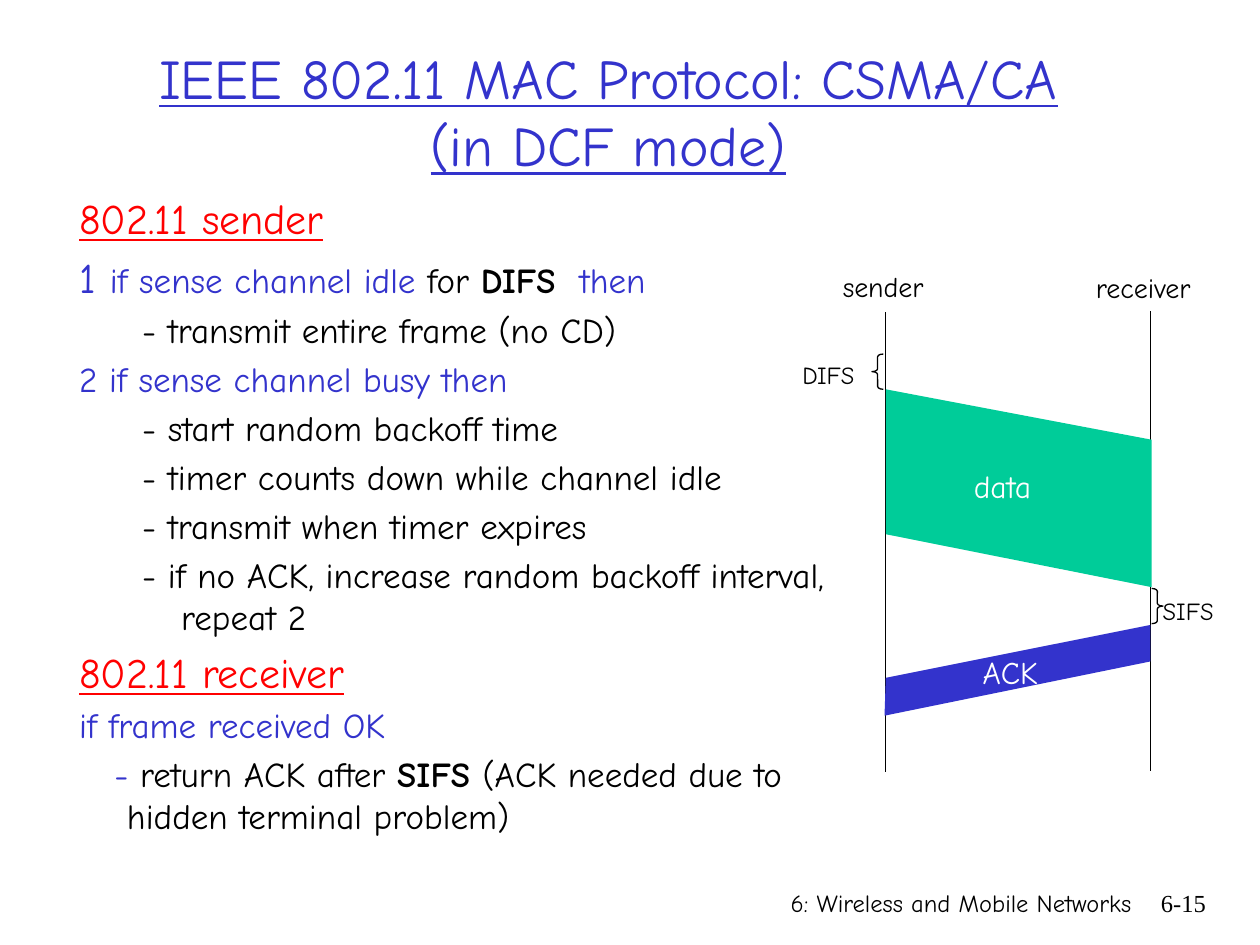
from dataclasses import dataclass

from lxml import etree
from pptx import Presentation
from pptx.dml.color import RGBColor
from pptx.enum.shapes import MSO_CONNECTOR, MSO_SHAPE
from pptx.enum.text import MSO_ANCHOR, PP_ALIGN
from pptx.oxml.ns import qn
from pptx.util import Inches, Pt

LEFT, CENTER, RIGHT = PP_ALIGN.LEFT, PP_ALIGN.CENTER, PP_ALIGN.RIGHT
TOP, MIDDLE = MSO_ANCHOR.TOP, MSO_ANCHOR.MIDDLE
LEFT_BRACE, RIGHT_BRACE = MSO_SHAPE.LEFT_BRACE, MSO_SHAPE.RIGHT_BRACE
STRAIGHT = MSO_CONNECTOR.STRAIGHT


@dataclass(frozen=True)
class Theme:
    font: str = "Comic Neue"
    number_font: str = "Times New Roman"
    black: str = "000000"
    white: str = "FFFFFF"
    blue: str = "3333CC"
    red: str = "FF0000"
    green: str = "00CC99"
    title: int = 32
    heading: int = 24
    body: int = 20
    band: int = 18
    label: int = 16
    small: int = 14
    line: float = 0.75


T = Theme()


def add_text(p, text, size=T.body, color=T.black, font=T.font, bold=False, underline=False):
    for i, line in enumerate(text.split("\n")):
        if i:
            p.add_line_break()
        r = p.add_run()
        r.text = line
        r.font.name, r.font.size = font, Pt(size)
        r.font.bold, r.font.underline = bold, underline
        r.font.color.rgb = RGBColor.from_string(color)


class SlideBuilder:
    def __init__(self, slide, theme):
        self.s = slide
        self.t = theme

    def box(self, x, y, w, h, anchor=TOP, wrap=True):
        sp = self.s.shapes.add_textbox(Inches(x), Inches(y), Inches(w), Inches(h))
        tf = sp.text_frame
        tf.word_wrap, tf.vertical_anchor = wrap, anchor
        return tf

    def text(self, x, y, w, h, text, align=LEFT, anchor=TOP, wrap=True, **fmt):
        p = self.box(x, y, w, h, anchor, wrap).paragraphs[0]
        p.alignment = align
        add_text(p, text, **fmt)

    def label(self, x, y, w, h, text, **fmt):
        self.text(x, y, w, h, text, wrap=False, **fmt)

    def outline(self, x, y, w, h, paragraphs):
        tf = self.box(x, y, w, h)
        for i, (margin, indent, runs) in enumerate(paragraphs):
            p = tf.paragraphs[0] if i == 0 else tf.add_paragraph()
            size = runs[0][1].get("size", self.t.body)
            p.space_before = Pt(size * 0.2)
            pPr = p._p.get_or_add_pPr()
            pPr.set("marL", str(Inches(margin)))
            pPr.set("indent", str(Inches(indent)))
            for text, fmt in runs:
                add_text(p, text, **fmt)

    def line(self, x1, y1, x2, y2):
        sp = self.s.shapes.add_connector(STRAIGHT, Inches(x1), Inches(y1), Inches(x2), Inches(y2))
        sp.line.color.rgb = RGBColor.from_string(self.t.black)
        sp.line.width = Pt(self.t.line)
        etree.SubElement(sp._element.spPr, qn("a:effectLst"))

    def brace(self, kind, x, y, w, h):
        sp = self.s.shapes.add_shape(kind, Inches(x), Inches(y), Inches(w), Inches(h))
        sp.adjustments[0] = 0.25
        sp.shadow.inherit = False
        sp.fill.background()
        sp.line.color.rgb = RGBColor.from_string(self.t.black)
        sp.line.width = Pt(self.t.line)

    def band(self, points, color):
        pts = [(Inches(x), Inches(y)) for x, y in points]
        fb = self.s.shapes.build_freeform(*pts[0])
        fb.add_line_segments(pts[1:], close=True)
        sp = fb.convert_to_shape()
        sp.shadow.inherit = False
        sp.fill.solid()
        sp.fill.fore_color.rgb = RGBColor.from_string(color)
        sp.line.fill.background()


def heading(text):
    return 0.38, -0.38, [(text, dict(size=T.heading, color=T.red, underline=True))]


def step(*runs):
    return 0.38, -0.38, list(runs)


def action(text):
    return 0.81, -0.31, [("- " + text, {})]


def main():
    prs = Presentation()
    prs.slide_width, prs.slide_height = Inches(10), Inches(7.5)
    b = SlideBuilder(prs.slides.add_slide(prs.slide_layouts[6]), T)
    blue, bold = dict(color=T.blue), dict(bold=True)

    b.text(4.86, 7, 4.22, 0.5, "6: Wireless and Mobile Networks", align=RIGHT, size=T.small)
    b.text(8.93, 7, 0.74, 0.5, "6-15", align=RIGHT, size=T.small, font=T.number_font)
    b.text(0.58, 0.25, 8.5, 1.25, "IEEE 802.11 MAC Protocol: CSMA/CA\n(in DCF mode)",
           align=CENTER, anchor=MIDDLE, size=T.title, color=T.blue, underline=True)

    b.outline(0.53, 1.48, 6.16, 5.42, [
        heading("802.11 sender"),
        step(("1 ", dict(size=T.heading, color=T.blue)), ("if sense channel idle", blue),
             (" for ", {}), ("DIFS ", bold), (" then", blue)),
        action("transmit entire frame (no CD)"),
        step(("2 if sense channel busy then", blue)),
        action("start random backoff time"),
        action("timer counts down while channel idle"),
        action("transmit when timer expires"),
        action("if no ACK, increase random backoff interval, repeat 2"),
        heading("802.11 receiver"),
        step(("if frame received OK", blue)),
        (0.38, -0.1, [("- ", blue), ("return ACK after ", {}), ("SIFS ", bold),
                      ("(ACK needed due to hidden terminal problem)", {})]),
    ])

    sender, receiver = 7.03, 9.13
    b.line(sender, 2.48, sender, 6.13)
    b.line(receiver, 2.47, receiver, 6.12)
    b.label(6.59, 2.09, 0.91, 0.37, "sender", size=T.label)
    b.label(8.6, 2.1, 1.07, 0.37, "receiver", size=T.label)

    b.brace(LEFT_BRACE, 6.92, 2.81, 0.09, 0.28)
    b.label(6.27, 2.81, 0.7, 0.33, "DIFS", size=T.small)
    b.band([(sender, 3.09), (9.14, 3.49), (9.14, 4.66), (sender, 4.24)], T.green)
    b.label(7.63, 3.66, 0.72, 0.4, "data", size=T.band, color=T.white)

    b.label(receiver, 4.68, 0.7, 0.33, "SIFS", size=T.small)
    b.brace(RIGHT_BRACE, 9.14, 4.67, 0.09, 0.28)
    b.band([(7.02, 5.68), (receiver, 5.25), (receiver, 4.96), (sender, 5.38)], T.blue)
    b.label(7.7, 5.13, 0.69, 0.4, "ACK", size=T.band, color=T.white)

    prs.save("out.pptx")


if __name__ == "__main__":
    main()
